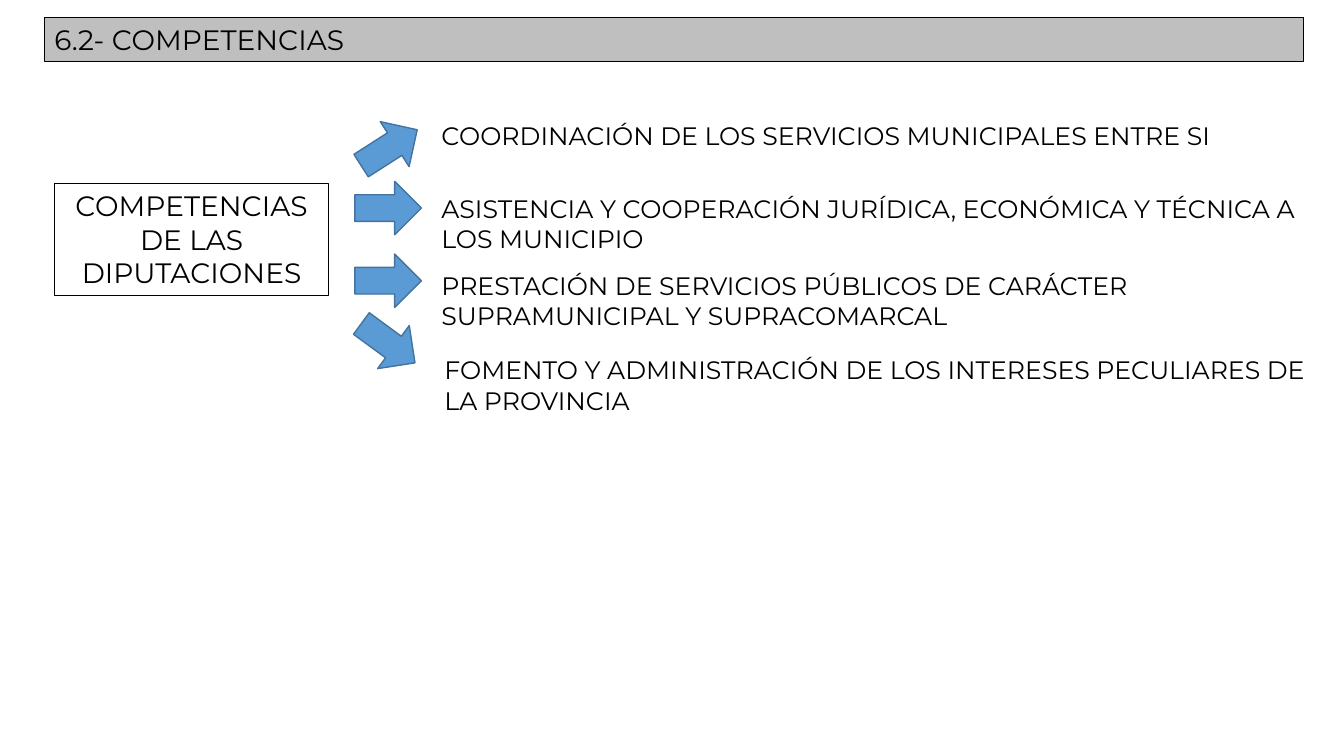
"""Build the slide on the powers of the provincial councils."""
from dataclasses import dataclass

from pptx import Presentation
from pptx.dml.color import RGBColor
from pptx.enum.shapes import MSO_SHAPE
from pptx.enum.text import MSO_ANCHOR, MSO_AUTO_SIZE, PP_ALIGN
from pptx.shapes.autoshape import Shape
from pptx.slide import Slide
from pptx.util import Pt

PX = 9144
FONT = "Montserrat"
COLOURS = {
    "text": "000000",
    "bar": "BFBFBF",
    "arrow": "5B9BD5",
    "arrow_line": "43739E",
}
FRAME_FORMAT = {
    "word_wrap": True,
    "auto_size": MSO_AUTO_SIZE.NONE,
}
ARROW_SIZE = (66, 53)
TEXT_SIZE = 18
HEADING_SIZE = 20


@dataclass(frozen=True)
class Box:
    """A rectangle in px, one hundred to the inch."""
    left: int
    top: int
    width: int
    height: int

    def emu(self) -> tuple[int, int, int, int]:
        """Return left, top, width and height in EMU."""
        return self.left * PX, self.top * PX, self.width * PX, self.height * PX


@dataclass(frozen=True)
class Competence:
    """One competence with the arrow that points to it."""
    text: str
    box: Box
    arrow_left: int
    arrow_top: int
    rotation: float = 0


TITLE_BOX = Box(44, 17, 1249, 44)
SOURCE_BOX = Box(54, 182, 272, 111)
COMPETENCES = [
    Competence("COORDINACIÓN DE LOS SERVICIOS MUNICIPALES ENTRE SI",
               Box(428, 114, 869, 40), 353, 120, 327.4),
    Competence("ASISTENCIA Y COOPERACIÓN JURÍDICA, ECONÓMICA Y TÉCNICA A LOS MUNICIPIO",
               Box(428, 187, 906, 71), 352, 180),
    Competence("PRESTACIÓN DE SERVICIOS PÚBLICOS DE CARÁCTER SUPRAMUNICIPAL Y SUPRACOMARCAL",
               Box(428, 263, 881, 71), 352, 252),
    Competence("FOMENTO Y ADMINISTRACIÓN DE LOS INTERESES PECULIARES DE LA PROVINCIA",
               Box(431, 347, 876, 71), 352, 314, 36.3),
]


def colour(name: str) -> RGBColor:
    """Return a named colour."""
    return RGBColor.from_string(COLOURS[name])


def write(s: Shape, text: str, size: int, align: PP_ALIGN, anchor: MSO_ANCHOR) -> None:
    """Write one paragraph into a shape."""
    tf = s.text_frame
    for key, value in {**FRAME_FORMAT, "vertical_anchor": anchor}.items():
        setattr(tf, key, value)
    p = tf.paragraphs[0]
    p.alignment = align
    r = p.add_run()
    r.text = text
    for key, value in {"name": FONT, "size": Pt(size)}.items():
        setattr(r.font, key, value)
    r.font.color.rgb = colour("text")


def outline(s: Shape, name: str, width: float) -> None:
    """Give a shape a solid outline."""
    s.line.color.rgb = colour(name)
    s.line.width = Pt(width)


def fill(s: Shape, name: str) -> None:
    """Give a shape a solid fill."""
    s.fill.solid()
    s.fill.fore_color.rgb = colour(name)


def add_title(slide: Slide) -> None:
    """Turn the title placeholder into the heading bar."""
    s = slide.shapes.title
    s.left, s.top, s.width, s.height = TITLE_BOX.emu()
    fill(s, "bar")
    outline(s, "text", 0.75)
    write(s, "6.2- COMPETENCIAS", HEADING_SIZE, PP_ALIGN.LEFT, MSO_ANCHOR.TOP)


def add_source(slide: Slide) -> None:
    """Add the framed box from which the arrows start."""
    s = slide.shapes.add_shape(MSO_SHAPE.RECTANGLE, *SOURCE_BOX.emu())
    s.shadow.inherit = False
    s.fill.background()
    outline(s, "text", 0.75)
    write(s, "COMPETENCIAS DE LAS DIPUTACIONES", HEADING_SIZE,
          PP_ALIGN.CENTER, MSO_ANCHOR.TOP)


def add_competence(slide: Slide, item: Competence) -> None:
    """Add one arrow and its text."""
    arrow_box = Box(item.arrow_left, item.arrow_top, *ARROW_SIZE)
    arrow = slide.shapes.add_shape(MSO_SHAPE.RIGHT_ARROW, *arrow_box.emu())
    arrow.shadow.inherit = False
    arrow.rotation = item.rotation
    fill(arrow, "arrow")
    outline(arrow, "arrow_line", 1)
    s = slide.shapes.add_textbox(*item.box.emu())
    write(s, item.text, TEXT_SIZE, PP_ALIGN.LEFT, MSO_ANCHOR.TOP)


def main() -> None:
    """Build and save the presentation."""
    prs = Presentation()
    prs.slide_width, prs.slide_height = 1333 * PX, 750 * PX
    slide = prs.slides.add_slide(prs.slide_layouts[5])
    add_title(slide)
    add_source(slide)
    for item in COMPETENCES:
        add_competence(slide, item)
    prs.save("out.pptx")


if __name__ == "__main__":
    main()
